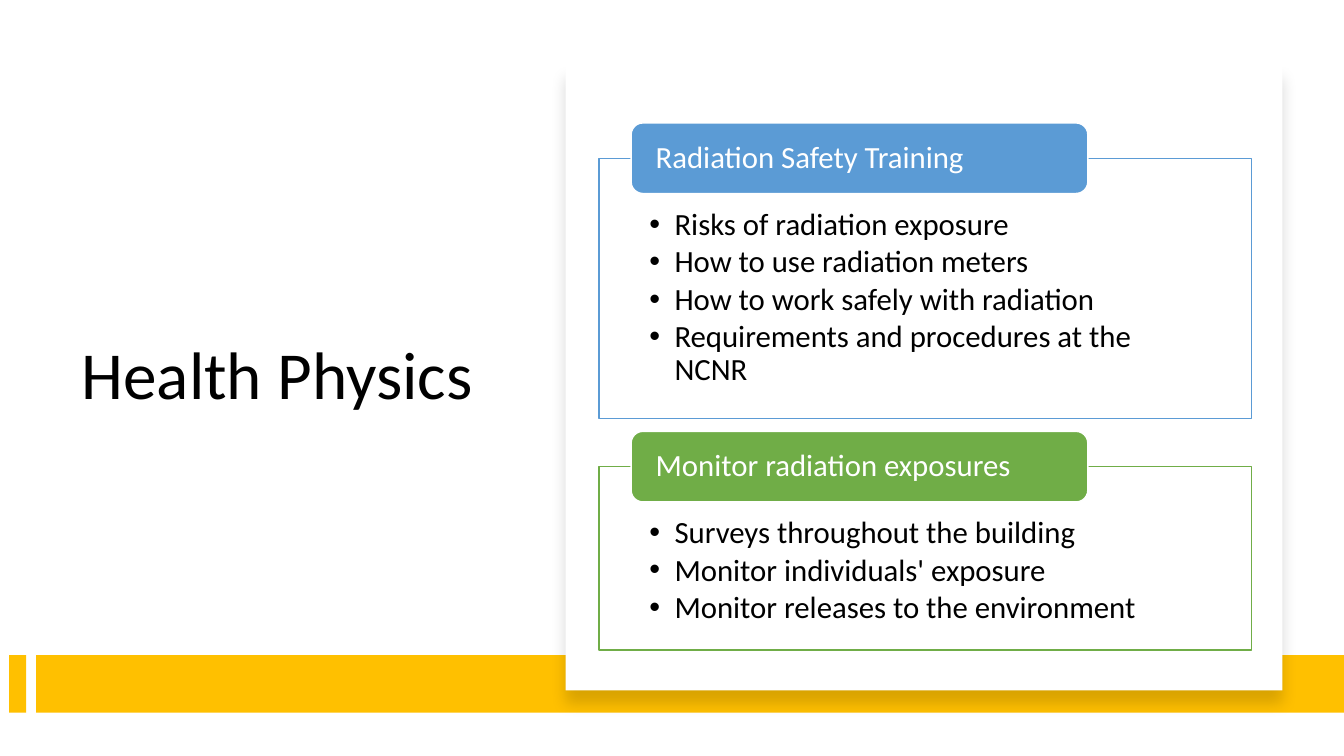
from lxml import etree
from pptx import Presentation
from pptx.dml.color import RGBColor
from pptx.enum.shapes import MSO_SHAPE as Shape
from pptx.enum.text import MSO_ANCHOR as Anchor, MSO_AUTO_SIZE as AutoSize, PP_ALIGN as Align
from pptx.oxml.ns import qn
from pptx.util import Inches, Pt

BLACK, WHITE, GOLD = "000000", "FFFFFF", "FFC000"
BLUE, GREEN = "5B9BD5", "70AD47"


def color(hex_value):
    return RGBColor.from_string(hex_value)


def set_all(target, values):
    for name, value in values.items():
        setattr(target, name, value)


def add_xml(parent, tag, **attributes):
    return etree.SubElement(parent, qn(tag), attributes)


class SlideBuilder:
    font = "Calibri"

    def __init__(self, slide):
        self.slide = slide

    def paint(self, shape, fill, line=None):
        shape.fill.solid()
        shape.fill.fore_color.rgb = color(fill)
        if line:
            shape.line.color.rgb = color(line)
            shape.line.width = Pt(1)
        else:
            shape.line.fill.background()

    def place(self, shape, box):
        set_all(shape, dict(zip(("left", "top", "width", "height"), map(Inches, box))))
        # Bring to the front
        shape.element.getparent().append(shape.element)

    def set_text(self, shape, lines, size, text_color, insets, anchor, after=0):
        frame = shape.text_frame
        frame.text = "\n".join(lines)
        sides = ("margin_left", "margin_top", "margin_right", "margin_bottom")
        set_all(frame, dict(zip(sides, map(Inches, insets))))
        set_all(frame, {"word_wrap": True, "auto_size": AutoSize.NONE,
                        "vertical_anchor": anchor})
        for paragraph in frame.paragraphs:
            set_all(paragraph, {"alignment": Align.LEFT, "line_spacing": 0.9,
                                "space_before": Pt(0), "space_after": Pt(after)})
            set_all(paragraph.runs[0].font, {"name": self.font, "size": Pt(size)})
            paragraph.runs[0].font.color.rgb = color(text_color)

    def title(self, text, box):
        title = self.slide.shapes.title
        self.place(title, box)
        self.set_text(title, [text], 48, BLACK, (0.1, 0.05, 0.1, 0.05), Anchor.MIDDLE)

    def block(self, box, fill, line=None, kind=Shape.RECTANGLE):
        shape = self.slide.shapes.add_shape(kind, *map(Inches, box))
        shape.shadow.inherit = False
        self.paint(shape, fill, line)
        return shape

    def panel(self, box):
        effects = self.block(box, WHITE).element.spPr.find(qn("a:effectLst"))
        shadow = add_xml(effects, "a:outerShdw", blurRad=str(Pt(11)), dist=str(Pt(10)),
                         dir="5400000", algn="t", rotWithShape="0")
        shade = add_xml(shadow, "a:srgbClr", val=BLACK)
        add_xml(shade, "a:alpha", val="15000")

    def bullet_list(self, index, lines, box, line):
        body = self.slide.placeholders[index]
        self.place(body, box)
        self.paint(body, WHITE, line)
        self.set_text(body, lines, 22, BLACK, (0.5, 0.5, 0.5, 0.17), Anchor.TOP, 3)
        for paragraph in body.text_frame.paragraphs:
            properties = paragraph._p.get_or_add_pPr()
            properties.set("marL", str(Inches(0.25)))
            properties.set("indent", str(Inches(-0.25)))
            add_xml(properties, "a:buChar", char="•")

    def header(self, text, box, fill):
        shape = self.block(box, fill, WHITE, Shape.ROUNDED_RECTANGLE)
        self.set_text(shape, [text], 22, WHITE, (0.21, 0, 0.21, 0), Anchor.MIDDLE)


def main():
    presentation = Presentation()
    set_all(presentation, {"slide_width": Inches(13.33), "slide_height": Inches(7.5)})
    slide = presentation.slides.add_slide(presentation.slide_layouts[3])
    builder = SlideBuilder(slide)

    # Title
    builder.title("Health Physics", (0.71, 1.2, 4.15, 5.1))

    # Gold band and white panel
    for left, width in ((0.09, 0.17), (0.36, 12.97)):
        builder.block((left, 6.5, width, 0.57), GOLD)
    builder.panel((5.61, 0.64, 7.11, 6.21))

    # Topics: heading, accent, top and height of the list, bullets
    topics = [
        ("Radiation Safety Training", BLUE, 1.57, 2.58,
         ["Risks of radiation exposure", "How to use radiation meters",
          "How to work safely with radiation",
          "Requirements and procedures at the NCNR"]),
        ("Monitor radiation exposures", GREEN, 4.63, 1.82,
         ["Surveys throughout the building", "Monitor individuals' exposure",
          "Monitor releases to the environment"]),
    ]
    for index, (heading, accent, top, height, lines) in enumerate(topics, 1):
        builder.bullet_list(index, lines, (5.94, top, 6.47, height), accent)
        builder.header(heading, (6.26, top - 0.35, 4.53, 0.7), accent)

    presentation.save("out.pptx")


if __name__ == "__main__":
    main()
